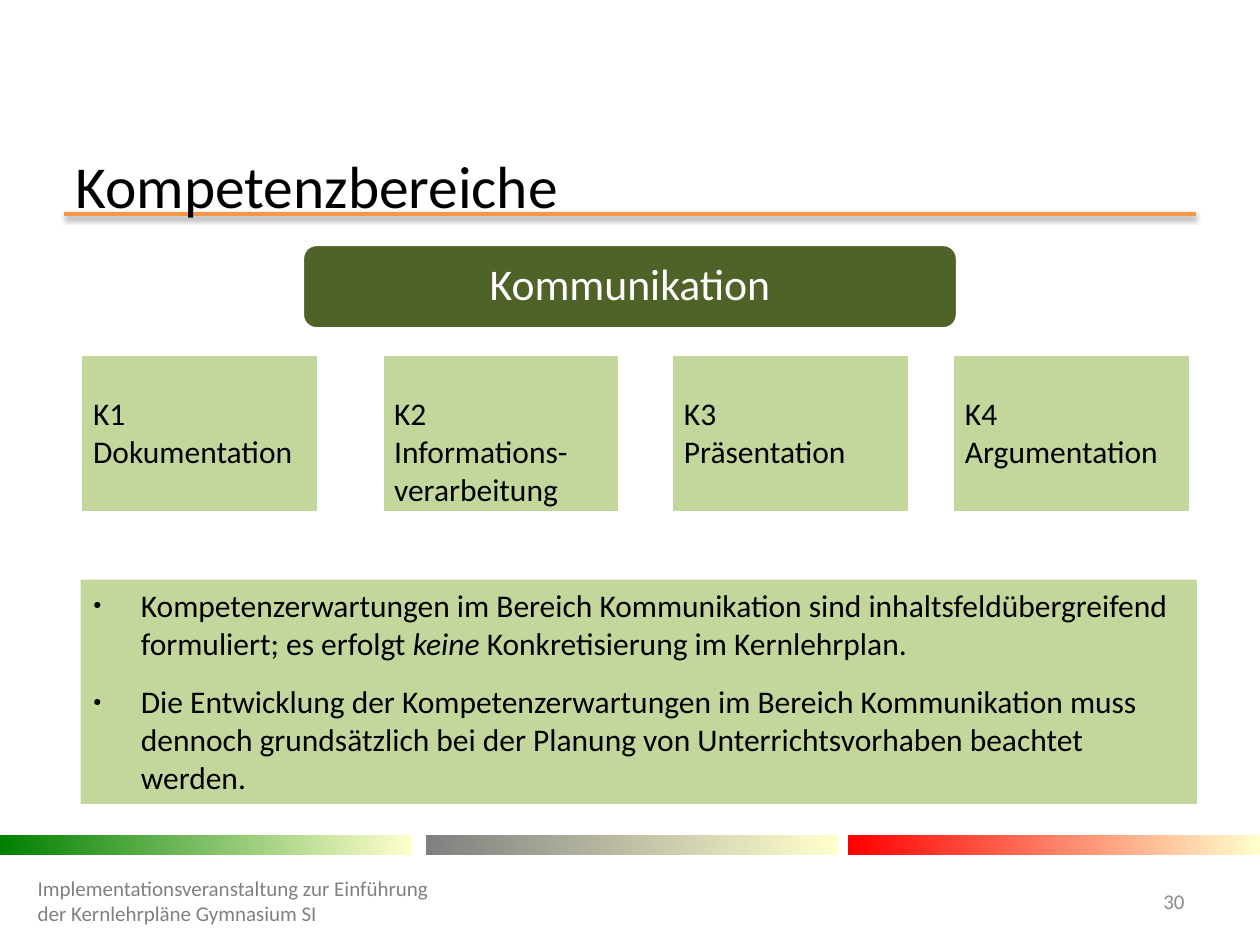
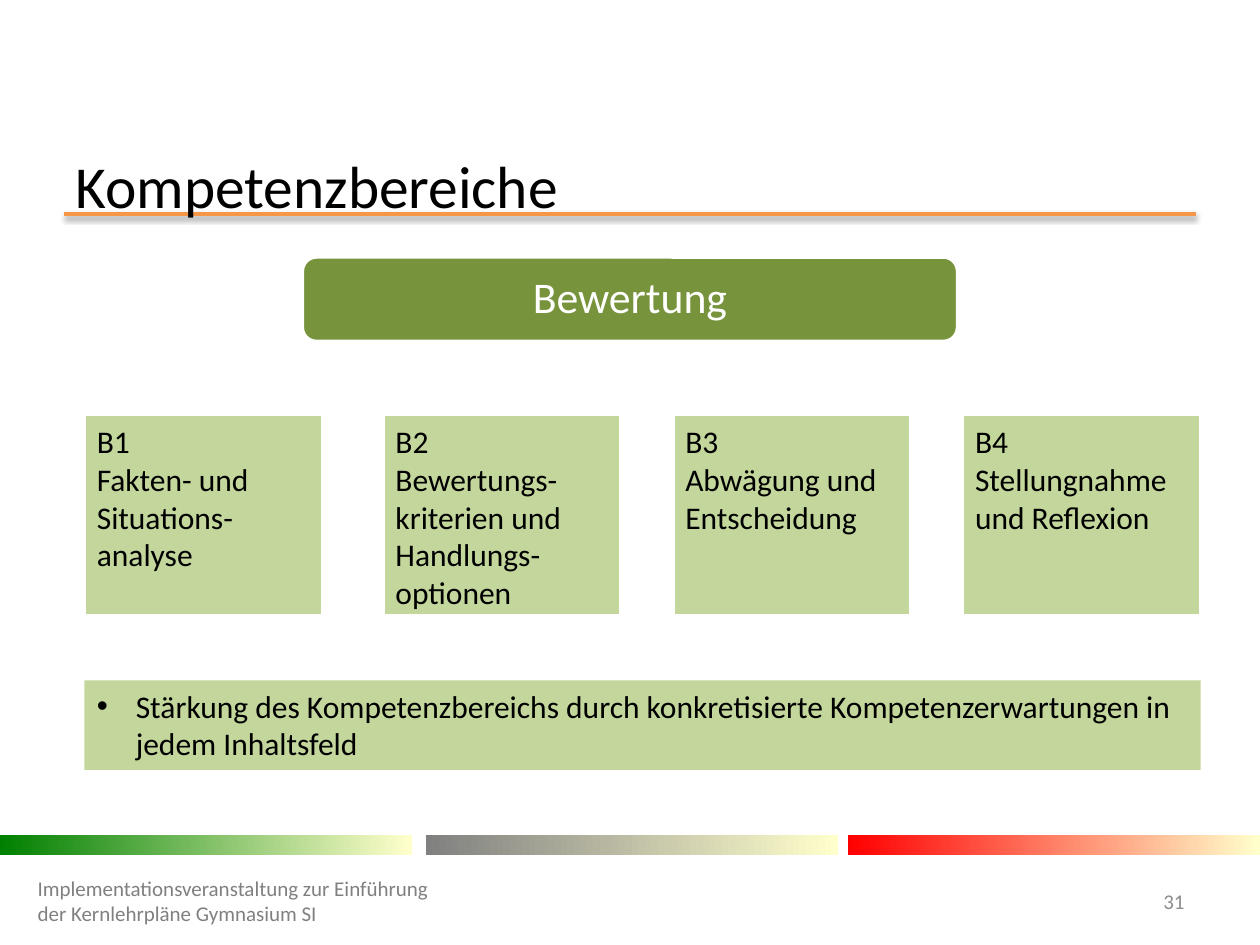
from lxml import etree
from pptx import Presentation
from pptx.dml.color import RGBColor
from pptx.enum.shapes import MSO_CONNECTOR, MSO_SHAPE
from pptx.enum.text import MSO_ANCHOR, MSO_AUTO_SIZE, PP_ALIGN
from pptx.oxml.ns import qn
from pptx.util import Emu, Pt

STRAIGHT = MSO_CONNECTOR.STRAIGHT
RECTANGLE, ROUNDED = MSO_SHAPE.RECTANGLE, MSO_SHAPE.ROUNDED_RECTANGLE
TOP, MIDDLE = MSO_ANCHOR.TOP, MSO_ANCHOR.MIDDLE
LEFT, CENTER, RIGHT = PP_ALIGN.LEFT, PP_ALIGN.CENTER, PP_ALIGN.RIGHT
NO_AUTOFIT = MSO_AUTO_SIZE.NONE

EMU_PER_PX = 9144  # 100 px to the inch
FONT = "Calibri"
BLACK, WHITE, ORANGE = "000000", "FFFFFF", "F79646"
LIGHT_GREEN, DARK_GREEN, MID_GREEN = "C3D69B", "4F6228", "77933C"
FOOTER_GRAY, NUMBER_GRAY = "808080", "8C8C8C"
BAND_END = "FFFFCC"
BANDS = [(0, "008000"), (338, "808080"), (673, "FF0000")]
TITLE = "Kompetenzbereiche"
FOOTER = "Implementationsveranstaltung zur Einführung der Kernlehrpläne Gymnasium SI"
CARD_WIDTH = 189


def px(*lengths):
    return [Emu(length * EMU_PER_PX) for length in lengths]


def color(hex_code):
    return RGBColor.from_string(hex_code)


def add_bullet(paragraph, char, indent, size_percent):
    properties = paragraph._p.get_or_add_pPr()
    indent_emu = px(indent)[0]
    properties.set("marL", str(indent_emu))
    properties.set("indent", str(-indent_emu))
    size = etree.SubElement(properties, qn("a:buSzPct"))
    size.set("val", str(size_percent * 1000))
    etree.SubElement(properties, qn("a:buFont")).set("typeface", "Arial")
    etree.SubElement(properties, qn("a:buChar")).set("char", char)


def write_text(frame, paragraphs, size=18, fill=BLACK, align=LEFT, anchor=TOP,
               line_spacing=None, space_before=0, bullet=None, margin_top=5):
    """Each paragraph is a string or a list of (text, italic) runs."""
    frame.word_wrap = True
    frame.auto_size = NO_AUTOFIT
    frame.vertical_anchor = anchor
    frame.margin_top = px(margin_top)[0]
    for index, content in enumerate(paragraphs):
        paragraph = frame.add_paragraph() if index else frame.paragraphs[0]
        if bullet:
            add_bullet(paragraph, **bullet)
        paragraph.alignment = align
        if line_spacing:
            paragraph.line_spacing = line_spacing
        if index and space_before:
            paragraph.space_before = Pt(space_before)
        runs = [(content, False)] if isinstance(content, str) else content
        for text, italic in runs:
            run = paragraph.add_run()
            run.text = text
            run.font.name = FONT
            run.font.size = Pt(size)
            run.font.color.rgb = color(fill)
            if italic:
                run.font.italic = True


def add_box(slide, box, fill, outline=None, preset=RECTANGLE):
    shape = slide.shapes.add_shape(preset, *px(*box))
    shape.shadow.inherit = False
    shape.fill.solid()
    shape.fill.fore_color.rgb = color(fill)
    if outline:
        shape.line.color.rgb = color(outline)
        shape.line.width = Pt(2)
    else:
        shape.line.fill.background()
    return shape


def add_label(slide, box, text, **text_format):
    label = slide.shapes.add_textbox(*px(*box))
    write_text(label.text_frame, [text], size=12, anchor=MIDDLE, **text_format)


def add_title_rule(slide):
    rule = slide.shapes.add_connector(STRAIGHT, *px(51, 170, 949, 170))
    rule.line.color.rgb = color(ORANGE)
    rule.line.width = Pt(2)
    effects = etree.SubElement(rule._element.spPr, qn("a:effectLst"))
    shadow = etree.SubElement(effects, qn("a:outerShdw"), blurRad=str(Pt(3.1)),
                              dist=str(Pt(1.6)), dir="5400000", rotWithShape="0")
    shade = etree.SubElement(shadow, qn("a:srgbClr"), val=BLACK)
    etree.SubElement(shade, qn("a:alpha"), val="38000")


def add_bands(slide):
    for left, start in BANDS:
        band = add_box(slide, (left, 663, 327, 16), start)
        band.fill.gradient()
        band.fill.gradient_angle = 0
        for stop, hex_code, position in zip(band.fill.gradient_stops,
                                            (start, BAND_END), (0, 1)):
            stop.color.rgb = color(hex_code)
            stop.position = position


def add_title(slide):
    title = slide.shapes.title
    title.left, title.top, title.width, title.height = px(50, 123, 900, 47)
    write_text(title.text_frame, [TITLE], size=34, anchor=MIDDLE)
    # The title lies in front of the rule.
    title.element.getparent().append(title.element)


def add_base_slide(prs, number):
    slide = prs.slides.add_slide(prs.slide_layouts.get_by_name("Title Only"))
    add_title_rule(slide)
    add_bands(slide)
    add_title(slide)
    add_label(slide, (886, 695, 64, 40), str(number), fill=NUMBER_GRAY, align=RIGHT)
    add_label(slide, (20, 695, 331, 40), FOOTER, fill=FOOTER_GRAY)
    return slide


def add_area_header(slide, top, text, fill):
    header = add_box(slide, (240, top, 520, 67), fill, WHITE, ROUNDED)
    write_text(header.text_frame, [text], size=25, fill=WHITE, align=CENTER,
               anchor=MIDDLE, line_spacing=0.9)


def add_cards(slide, top, height, margin_top, cards):
    for left, lines in cards:
        card = add_box(slide, (left, top, CARD_WIDTH, height), LIGHT_GREEN, WHITE)
        write_text(card.text_frame, lines, margin_top=margin_top)


def add_notes_panel(slide, box, paragraphs, **text_format):
    panel = add_box(slide, box, LIGHT_GREEN)
    write_text(panel.text_frame, paragraphs, **text_format)


def build_communication(prs):
    slide = add_base_slide(prs, 30)
    add_area_header(slide, 194, "Kommunikation", DARK_GREEN)
    add_cards(slide, 281, 126, 32, [
        (64, ["K1", "Dokumentation"]),
        (303, ["K2", "Informations-verarbeitung"]),
        (533, ["K3", "Präsentation"]),
        (756, ["K4", "Argumentation"]),
    ])
    add_notes_panel(slide, (64, 460, 886, 178), [
        [("Kompetenzerwartungen im Bereich Kommunikation sind "
          "inhaltsfeldübergreifend formuliert; es erfolgt ", False),
         ("keine", True),
         (" Konkretisierung im Kernlehrplan.", False)],
        "Die Entwicklung der Kompetenzerwartungen im Bereich Kommunikation muss "
        "dennoch grundsätzlich bei der Planung von Unterrichtsvorhaben beachtet "
        "werden.",
    ], space_before=12, bullet={"char": "●", "indent": 38, "size_percent": 45})


def build_evaluation(prs):
    slide = add_base_slide(prs, 31)
    add_area_header(slide, 204, "Bewertung", MID_GREEN)
    add_cards(slide, 329, 160, 6, [
        (67, ["B1", "Fakten- und Situations-analyse"]),
        (304, ["B2", "Bewertungs-kriterien und", "Handlungs-", "optionen"]),
        (534, ["B3", "Abwägung und", "Entscheidung"]),
        (764, ["B4", "Stellungnahme und Reflexion"]),
    ])
    add_notes_panel(slide, (67, 540, 886, 71), [
        "Stärkung des Kompetenzbereichs durch konkretisierte "
        "Kompetenzerwartungen in jedem Inhaltsfeld",
    ], bullet={"char": "•", "indent": 31, "size_percent": 100})


def main():
    prs = Presentation()
    prs.slide_width, prs.slide_height = px(1000, 750)
    build_communication(prs)
    build_evaluation(prs)
    prs.save("out.pptx")


if __name__ == "__main__":
    main()
